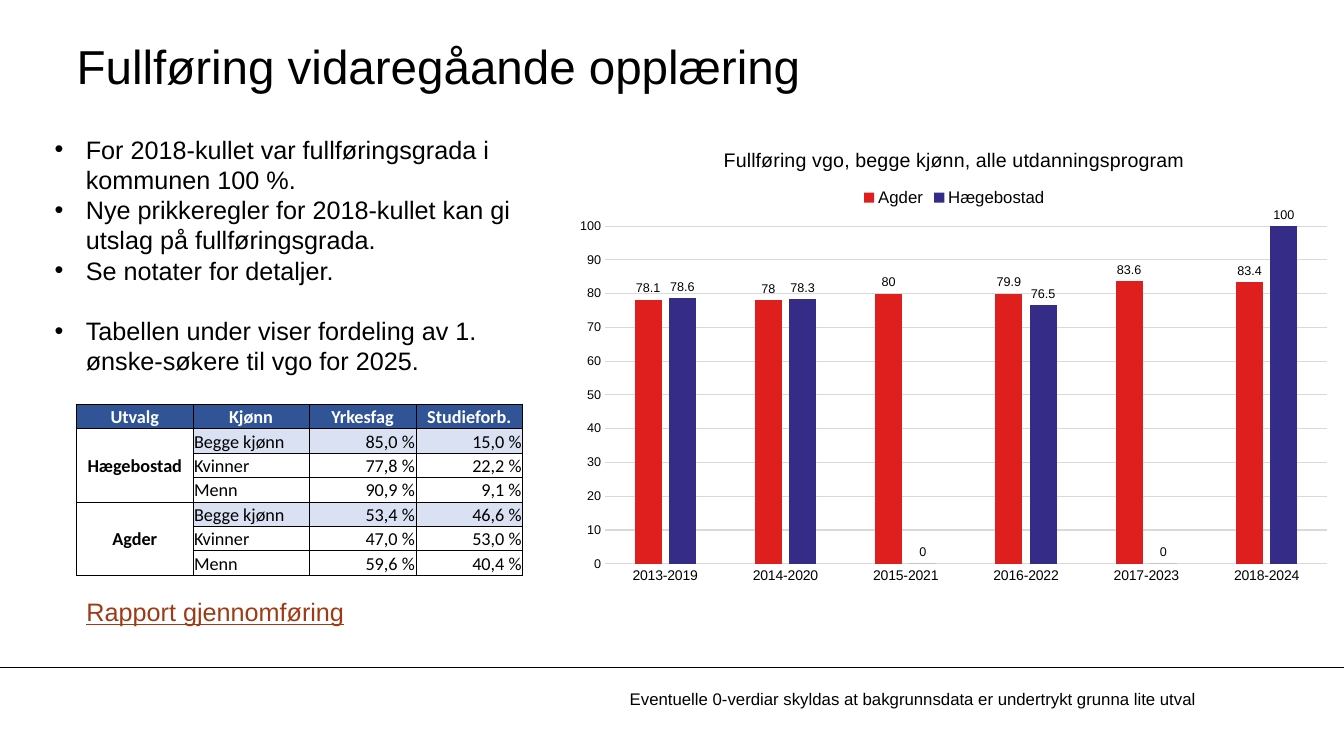
from dataclasses import dataclass

from pptx import Presentation
from pptx import util as u
from pptx.chart import data
from pptx.dml.color import RGBColor
from pptx.enum import chart as ch, shapes, text
from pptx.oxml import parse_xml
from pptx.oxml.ns import nsdecls
from pptx.util import Cm

LEFT, CENTER, RIGHT = text.PP_ALIGN.LEFT, text.PP_ALIGN.CENTER, text.PP_ALIGN.RIGHT
MIDDLE, BOTTOM = text.MSO_ANCHOR.MIDDLE, text.MSO_ANCHOR.BOTTOM


@dataclass(frozen=True)
class Theme:
    font: str = "Arial"
    table_font: str = "Calibri"
    ink: str = "000000"
    paper: str = "FFFFFF"
    link: str = "9F3A14"
    header: str = "305496"
    band: str = "D9E1F2"
    grid: str = "D9D9D9"
    agder: str = "DF1F1D"
    commune: str = "342C86"
    title: float = 34
    body: float = 18
    chart_title: float = 14
    cell: float = 13
    note: float = 12
    category: float = 10
    value: float = 9


T = Theme()

BULLETS = [
    "For 2018-kullet var fullføringsgrada i kommunen 100 %.",
    "Nye prikkeregler for 2018-kullet kan gi utslag på fullføringsgrada.",
    "Se notater for detaljer.",
    "Tabellen under viser fordeling av 1. ønske-søkere til vgo for 2025.",
]
HEADERS = ["Utvalg", "Kjønn", "Yrkesfag", "Studieforb."]
APPLICANTS = {
    "Hægebostad": [("Begge kjønn", "85,0 %", "15,0 %"),
                   ("Kvinner", "77,8 %", "22,2 %"),
                   ("Menn", "90,9 %", "9,1 %")],
    "Agder": [("Begge kjønn", "53,4 %", "46,6 %"),
              ("Kvinner", "47,0 %", "53,0 %"),
              ("Menn", "59,6 %", "40,4 %")],
}
COHORTS = [f"{year}-{year + 6}" for year in range(2013, 2019)]
COMPLETION = {
    "Agder": (T.agder, (78.1, 78, 80, 79.9, 83.6, 83.4)),
    "Hægebostad": (T.commune, (78.6, 78.3, 0, 76.5, 0, 100)),
}


def rgb(color):
    return RGBColor.from_string(color)


def style_font(font, size, color=T.ink, name=T.font, bold=False, underline=False):
    font.size, font.name = u.Pt(size), name
    font.bold, font.underline = bold, underline
    font.color.rgb = rgb(color)


def write(p, content, align=LEFT, **font_format):
    p.alignment = align
    r = p.add_run()
    r.text = content
    style_font(r.font, **font_format)


def place(sp, left, top, width, height):
    sp.left, sp.top, sp.width, sp.height = Cm(left), Cm(top), Cm(width), Cm(height)


def add_text(s, box, content, **font_format):
    tf = s.shapes.add_textbox(*map(Cm, box)).text_frame
    tf.word_wrap = True
    write(tf.paragraphs[0], content, **font_format)


def set_title(s, content):
    sp = s.shapes.title
    place(sp, 1.93, 0.69, 28.19, 1.9)
    tf = sp.text_frame
    tf.margin_left = tf.margin_right = tf.margin_top = tf.margin_bottom = 0
    tf.vertical_anchor = MIDDLE
    write(tf.paragraphs[0], content, size=T.title)


def set_bullets(s, items):
    sp = s.placeholders[1]
    place(sp, 1.12, 3.25, 13.13, 7.19)
    tf = sp.text_frame
    tf.auto_size = text.MSO_AUTO_SIZE.NONE
    for i, item in enumerate(items):
        p = tf.paragraphs[0] if i == 0 else tf.add_paragraph()
        pPr = p._p.get_or_add_pPr()
        pPr.set("marL", str(Cm(0.79)))
        pPr.set("indent", str(-Cm(0.79)))
        pPr.append(parse_xml(f'<a:buFont {nsdecls("a")} typeface="Arial"/>'))
        pPr.append(parse_xml(f'<a:buChar {nsdecls("a")} char="•"/>'))
        p.space_before = u.Pt(21.5 if i == len(items) - 1 else 0)
        write(p, item, size=T.body)


def add_rule(s, y, width):
    line = s.shapes.add_connector(shapes.MSO_CONNECTOR.STRAIGHT, 0, Cm(y), width, Cm(y))
    line.line.color.rgb = rgb(T.ink)
    line.line.width = u.Pt(0.75)
    line._element.spPr.append(parse_xml(f'<a:effectLst {nsdecls("a")}/>'))


def fill_cell(cell, content, fill=T.paper, anchor=BOTTOM, **text_format):
    cell.margin_left = cell.margin_right = cell.margin_top = Cm(0.03)
    cell.margin_bottom = 0
    cell.vertical_anchor = anchor
    write(cell.text_frame.paragraphs[0], content, size=T.cell, name=T.table_font, **text_format)
    cell.fill.solid()
    cell.fill.fore_color.rgb = rgb(fill)


def add_borders(cell):
    tcPr = cell._tc.get_or_add_tcPr()
    for i, side in enumerate(("lnL", "lnR", "lnT", "lnB")):
        tcPr.insert(i, parse_xml(
            f'<a:{side} {nsdecls("a")} w="{u.Pt(0.5)}"><a:solidFill>'
            f'<a:srgbClr val="{T.ink}"/></a:solidFill></a:{side}>'))


def add_applicant_table(s):
    rows = 1 + sum(map(len, APPLICANTS.values()))
    frame = s.shapes.add_table(rows, len(HEADERS), Cm(1.93), Cm(10.19), Cm(11.24), Cm(4.3))
    table = frame.table
    table.first_row = table.horz_banding = False
    for column, width in zip(table.columns, (2.93, 2.93, 2.69, 2.69)):
        column.width = Cm(width)
    for col, header in enumerate(HEADERS):
        fill_cell(table.cell(0, col), header, fill=T.header, color=T.paper, bold=True, align=CENTER)
    row = 1
    for area, groups in APPLICANTS.items():
        area_cell = table.cell(row, 0)
        area_cell.merge(table.cell(row + len(groups) - 1, 0))
        fill_cell(area_cell, area, anchor=MIDDLE, bold=True, align=CENTER)
        for i, group in enumerate(groups):
            for col, value in enumerate(group, 1):
                fill_cell(table.cell(row, col), value, fill=T.paper if i else T.band,
                          align=LEFT if col == 1 else RIGHT)
            row += 1
    for cell in table.iter_cells():
        add_borders(cell)


def style_axis(axis, size):
    axis.major_tick_mark = axis.minor_tick_mark = ch.XL_TICK_MARK.NONE
    style_font(axis.tick_labels.font, size)


def set_plot_area(chart, **fractions):
    """Fix the inner plot area as fractions of the chart frame."""
    plot_area = chart._chartSpace.chart.plotArea
    for old in plot_area.findall("{*}layout"):
        plot_area.remove(old)
    values = "".join(f'<c:{key} val="{value}"/>' for key, value in fractions.items())
    plot_area.insert(0, parse_xml(
        f'<c:layout {nsdecls("c")}><c:manualLayout><c:layoutTarget val="inner"/>'
        f'<c:xMode val="edge"/><c:yMode val="edge"/>{values}</c:manualLayout></c:layout>'))


def add_completion_chart(s):
    chart_data = data.CategoryChartData()
    chart_data.categories = COHORTS
    for name, (_, values) in COMPLETION.items():
        chart_data.add_series(name, values)
    chart = s.shapes.add_chart(ch.XL_CHART_TYPE.COLUMN_CLUSTERED, Cm(14.27), Cm(3.25),
                               Cm(19.56), Cm(11.66), chart_data).chart
    style_font(chart.font, T.category)
    chart.has_title = True
    write(chart.chart_title.text_frame.paragraphs[0],
          "Fullføring vgo, begge kjønn, alle utdanningsprogram", align=CENTER, size=T.chart_title)
    chart.chart_title.include_in_layout = False
    chart.has_legend = True
    chart.legend.position = ch.XL_LEGEND_POSITION.TOP
    chart.legend.include_in_layout = False
    style_font(chart.legend.font, T.note)
    set_plot_area(chart, x=0.05, y=0.21, w=0.93, h=0.73)

    categories, values = chart.category_axis, chart.value_axis
    style_axis(categories, T.category)
    style_axis(values, T.value)
    values.minimum_scale, values.maximum_scale, values.major_unit = 0, 100, 10
    values.tick_labels.number_format = "#,##0"
    values.tick_labels.number_format_is_linked = False
    values.format.line.fill.background()
    for line in (categories.format.line, values.major_gridlines.format.line):
        line.color.rgb = rgb(T.grid)
        line.width = u.Pt(0.75)

    plot = chart.plots[0]
    plot.gap_width, plot.overlap, plot.vary_by_categories = 219, -27, False
    for series, (color, _) in zip(plot.series, COMPLETION.values()):
        series.format.fill.solid()
        series.format.fill.fore_color.rgb = rgb(color)
        labels = series.data_labels
        labels.show_value = True
        labels.position = ch.XL_LABEL_POSITION.OUTSIDE_END
        style_font(labels.font, T.value)


def main():
    prs = Presentation()
    prs.slide_width, prs.slide_height = Cm(33.87), Cm(19.05)
    s = prs.slides.add_slide(prs.slide_layouts[1])
    add_rule(s, 16.82, prs.slide_width)
    set_title(s, "Fullføring vidaregåande opplæring")
    set_bullets(s, BULLETS)
    add_applicant_table(s)
    add_text(s, (15.62, 17.22, 14.86, 0.76),
             "Eventuelle 0-verdiar skyldas at bakgrunnsdata er undertrykt grunna lite utval", size=T.note)
    add_text(s, (1.93, 14.91, 7.14, 1.02), "Rapport gjennomføring",
             size=T.body, color=T.link, underline=True)
    add_completion_chart(s)
    prs.save("out.pptx")


if __name__ == "__main__":
    main()
